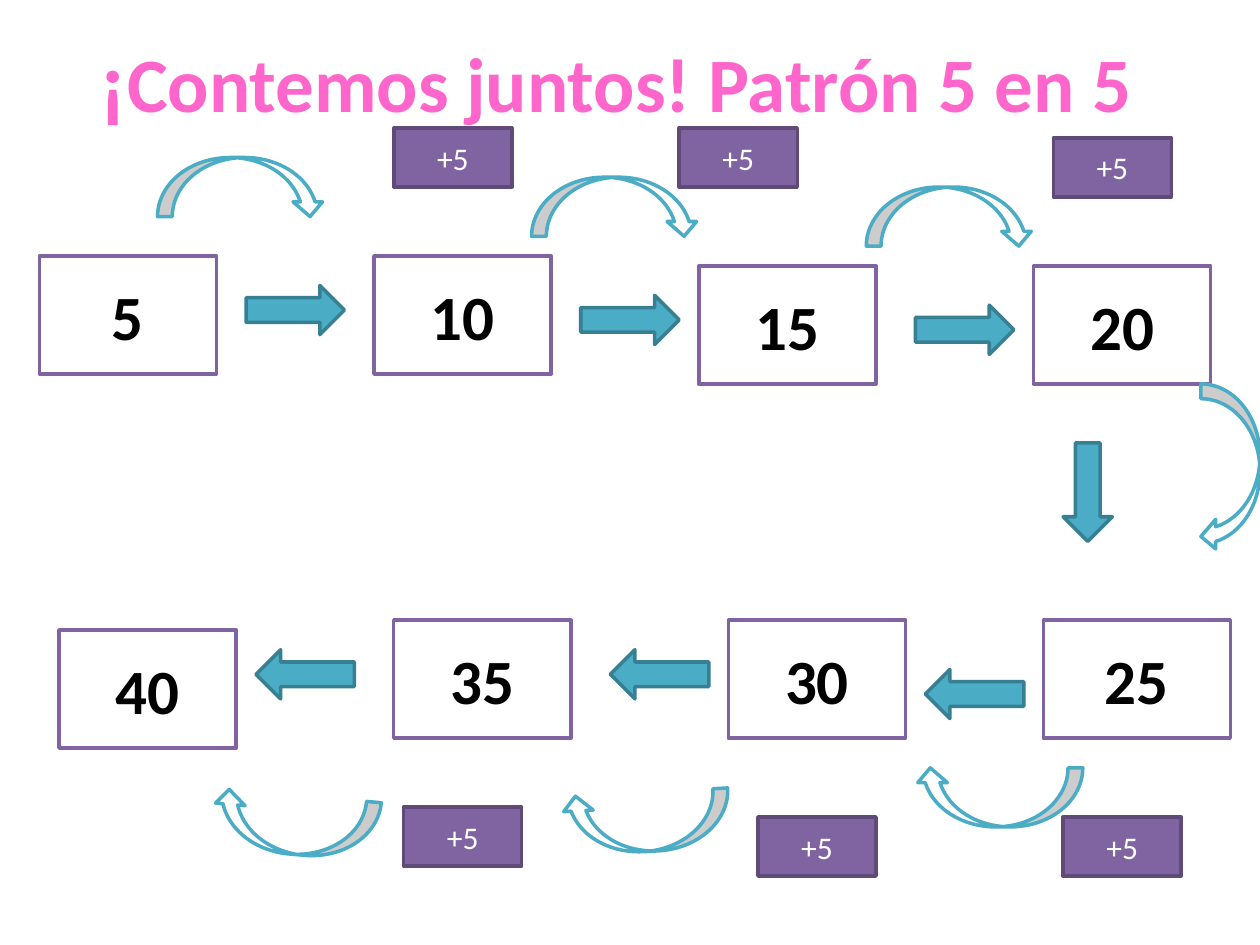
from pptx import Presentation
from pptx import util as u
from pptx.dml.color import RGBColor
from pptx.enum import shapes, text

PINK = RGBColor(0xFF, 0x66, 0xCC)
PURPLE = RGBColor(0x80, 0x64, 0xA2)
DARK_PURPLE = RGBColor(0x5F, 0x4A, 0x78)
TEAL = RGBColor(0x4B, 0xAC, 0xC6)
DARK_TEAL = RGBColor(0x37, 0x7F, 0x92)
WHITE = RGBColor(0xFF, 0xFF, 0xFF)
BLACK = RGBColor(0, 0, 0)

# Content; places are (column, row) on a grid of 128 columns by 96 rows
COLUMNS = 128
TITLE = [("¡", 48), ("Contemos juntos! Patrón 5 en 5", 44)]
STEP = 5
BOX_PLACES = [(4, 26), (38, 26), (71, 27), (105, 27),
              (106, 63), (74, 63), (40, 63), (6, 64)]
WIDE_BOX = 25
STEP_PLACES = [(40, 13), (69, 13), (107, 14), (108, 83), (77, 83), (41, 82)]
# Arrows: column, row, rotation
STRAIGHT_ARROWS = [(25, 29, 0), (59, 30, 0), (93, 31, 0), (105.5, 47.5, 90),
                   (94, 68, 180), (62, 66, 180), (26, 66, 180)]
CURVED_ARROWS = [(16, 16, 0), (54, 18, 0), (88, 19, 0), (116.5, 44.5, 90),
                 (93, 78, 180), (57.1, 80.5, 176.9), (21.5, 80.8, 185)]

# Looks: preset shape, size in grid cells, colours and font
RECTANGLE = shapes.MSO_SHAPE.RECTANGLE
BOX = dict(kind=RECTANGLE, size=(18, 12), fill=WHITE, line=PURPLE,
           font=dict(size=u.Pt(36), bold=True), color=BLACK)
STEP_LABEL = dict(kind=RECTANGLE, size=(12, 6), fill=PURPLE, line=DARK_PURPLE,
                  font=dict(size=u.Pt(18), bold=False), color=WHITE)
STRAIGHT = dict(kind=shapes.MSO_SHAPE.RIGHT_ARROW, size=(10, 5),
                fill=TEAL, line=DARK_TEAL)
CURVED = dict(kind=shapes.MSO_SHAPE.CURVED_DOWN_ARROW, size=(17, 6),
              fill=WHITE, line=TEAL)

presentation = Presentation()
presentation.slide_width, presentation.slide_height = u.Inches(10), u.Inches(7.5)
slide = presentation.slides.add_slide(presentation.slide_layouts[5])


def cells(*counts):
    return [int(presentation.slide_width * count / COLUMNS) for count in counts]


def add_run(paragraph, words, color, **font):
    run = paragraph.add_run()
    run.text = words
    run.font.color.rgb = color
    for name, value in {"name": "Calibri", **font}.items():
        setattr(run.font, name, value)


def add_part(look, column, row, rotation=0, words=None, width=None):
    shape_width, height = look["size"]
    shape = slide.shapes.add_shape(
        look["kind"], *cells(column, row, width or shape_width, height))
    shape.shadow.inherit = False
    shape.rotation = rotation
    shape.fill.solid()
    shape.fill.fore_color.rgb = look["fill"]
    shape.line.color.rgb = look["line"]
    shape.line.width = u.Pt(2)
    if words:
        frame = shape.text_frame
        frame.vertical_anchor = text.MSO_ANCHOR.MIDDLE
        paragraph = frame.paragraphs[0]
        paragraph.alignment = text.PP_ALIGN.CENTER
        add_run(paragraph, words, look["color"], **look["font"])


# Title
title = slide.shapes.title
title.left, title.top, title.width, title.height = cells(5, 0, 115.2, 16)
title.text_frame.vertical_anchor = text.MSO_ANCHOR.MIDDLE
title_paragraph = title.text_frame.paragraphs[0]
title_paragraph.alignment = text.PP_ALIGN.CENTER
for words, size in TITLE:
    add_run(title_paragraph, words, PINK, size=u.Pt(size), bold=True)

# Number boxes, counting up by the step
for index, place in enumerate(BOX_PLACES, 1):
    number = index * STEP
    add_part(BOX, *place, words=str(number),
             width=19 if number == WIDE_BOX else None)

# Arrows between the numbers
for look, arrows in ((STRAIGHT, STRAIGHT_ARROWS), (CURVED, CURVED_ARROWS)):
    for arrow in arrows:
        add_part(look, *arrow)

# Step labels
for place in STEP_PLACES:
    add_part(STEP_LABEL, *place, words=f"+{STEP}")

presentation.save("out.pptx")
